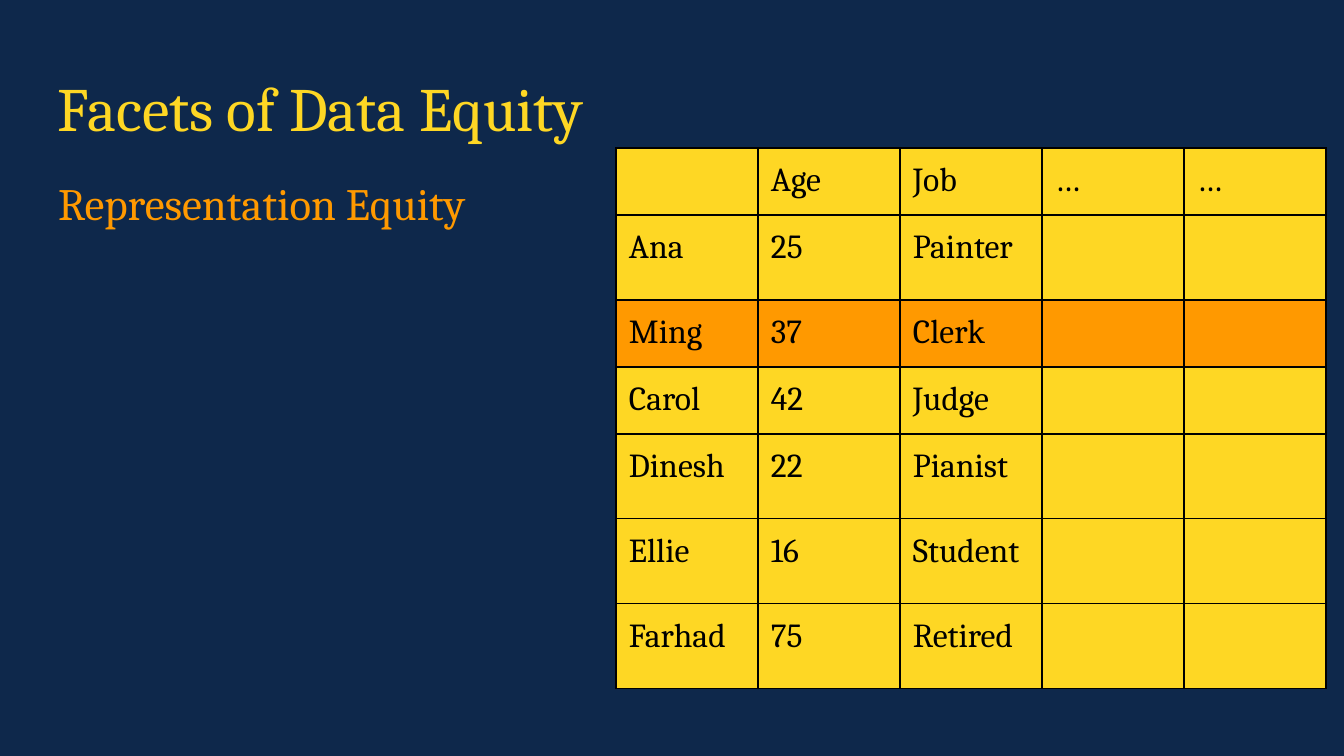
from dataclasses import dataclass

from lxml import etree
from pptx import Presentation
from pptx.dml.color import RGBColor
from pptx.enum.text import MSO_ANCHOR
from pptx.oxml.ns import qn
from pptx.util import Emu, Pt

TOP = MSO_ANCHOR.TOP
SCALE = 914400 / 100.8
PAD = 13
COLS = 5
COL_W = 142
LOW, TALL = 67, 85
MARKED = "Ming"
ROWS = [
    (LOW, ["", "Age", "Job", "…", "…"]),
    (TALL, ["Ana", "25", "Painter"]),
    (LOW, ["Ming", "37", "Clerk"]),
    (LOW, ["Carol", "42", "Judge"]),
    (TALL, ["Dinesh", "22", "Pianist"]),
    (TALL, ["Ellie", "16", "Student"]),
    (TALL, ["Farhad", "75", "Retired"]),
]


@dataclass(frozen=True)
class Theme:
    """Colours, font and type sizes of the slide."""
    navy: str = "0E284B"
    gold: str = "FED724"
    orange: str = "FF9900"
    black: str = "000000"
    font: str = "Cambria"
    title: int = 44
    head: int = 32
    cell: int = 24
    rule: int = 1


THEME = Theme()


def px(num):
    """Turn pixels into EMU."""
    return Emu(round(num * SCALE))


def paint(fill, color):
    """Give a fill one solid colour."""
    fill.solid()
    fill.fore_color.rgb = RGBColor.from_string(color)


def style(para, size, color):
    """Set the font of a paragraph."""
    font = para.font
    font.name = THEME.font
    font.size = Pt(size)
    font.color.rgb = RGBColor.from_string(color)


def inset(item):
    """Set equal margins on a cell or text frame."""
    item.margin_left = item.margin_right = px(PAD)
    item.margin_top = item.margin_bottom = px(PAD)
    item.vertical_anchor = TOP


def add_text(slide, box, text, size, color):
    """Add a wrapped line of text."""
    frame = slide.shapes.add_textbox(*map(px, box)).text_frame
    frame.word_wrap = True
    inset(frame)
    para = frame.paragraphs[0]
    para.text = text
    para.line_spacing = 0.9
    style(para, size, color)


def add_rules(cell):
    """Draw the four borders of a cell."""
    props = cell._tc.get_or_add_tcPr()
    for spot, side in enumerate(("lnL", "lnR", "lnT", "lnB")):
        line = etree.Element(qn(f"a:{side}"), w=str(Pt(THEME.rule)))
        solid = etree.SubElement(line, qn("a:solidFill"))
        etree.SubElement(solid, qn("a:srgbClr"), val=THEME.black)
        props.insert(spot, line)


def fill_cell(cell, text, color):
    """Write and colour one cell."""
    inset(cell)
    para = cell.text_frame.paragraphs[0]
    para.text = text
    style(para, THEME.cell, THEME.black)
    paint(cell.fill, color)
    add_rules(cell)


def add_grid(slide, left, top):
    """Add the table of people with one marked row."""
    high = sum(tall for tall, _ in ROWS)
    box = map(px, (left, top, COLS * COL_W, high))
    grid = slide.shapes.add_table(len(ROWS), COLS, *box).table
    for col in grid.columns:
        col.width = px(COL_W)
    for row, (tall, words) in zip(grid.rows, ROWS):
        row.height = px(tall)
        color = THEME.orange if words[0] == MARKED else THEME.gold
        for spot, cell in enumerate(row.cells):
            text = words[spot] if spot < len(words) else ""
            fill_cell(cell, text, color)


def main():
    """Build and save the slide."""
    deck = Presentation()
    deck.slide_width, deck.slide_height = px(1344), px(756)
    slide = deck.slides.add_slide(deck.slide_layouts[6])
    paint(slide.background.fill, THEME.navy)
    add_text(slide, (45, 65, 1252, 85), "Facets of Data Equity",
             THEME.title, THEME.gold)
    add_text(slide, (45, 169, 593, 502), "Representation Equity",
             THEME.head, THEME.orange)
    add_grid(slide, 616, 148)
    deck.save("out.pptx")


if __name__ == "__main__":
    main()
